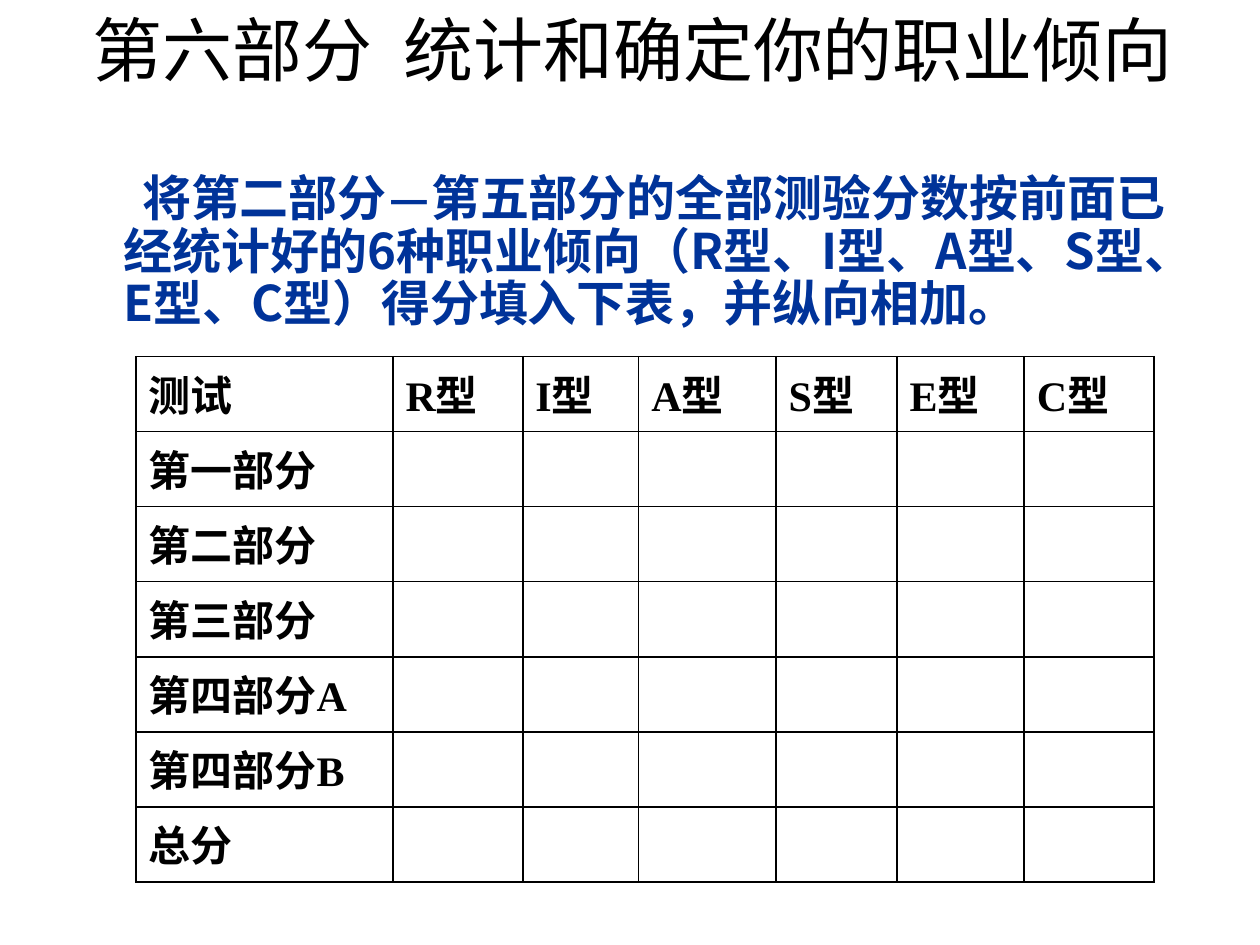
import pptx
import pptx.dml.color
import pptx.enum.text
import pptx.oxml
import pptx.oxml.ns
import pptx.util
from dataclasses import dataclass
from lxml import etree

Inches = pptx.util.Inches
Pt = pptx.util.Pt
qn = pptx.oxml.ns.qn


@dataclass(frozen=True)
class Theme:
    black: str = "000000"
    blue: str = "003399"
    white: str = "FFFFFF"
    chinese: str = "Noto Sans CJK SC"
    dash: str = "Calibri"
    table: str = "Times New Roman"
    title_size: int = 40
    body_size: int = 28
    table_size: int = 24
    border_width: int = 1


THEME = Theme()
TITLE = "第六部分  统计和确定你的职业倾向"
INSTRUCTION = (
    ("将第二部分", THEME.chinese),
    ("—", THEME.dash),
    ("第五部分的全部测验分数按前面已经统计好的6种职业倾向"
     "（R型、I型、A型、S型、E型、C型）得分填入下表，并纵向相加。", THEME.chinese),
)
HEADERS = ["测试"] + [f"{letter}型" for letter in "RIASEC"]
ROW_LABELS = ["第一部分", "第二部分", "第三部分", "第四部分A", "第四部分B", "总分"]
COLUMN_WIDTHS = [2.04, 1.03, 0.92, 1.09, 0.96, 1.01, 1.03]
TABLE_HEIGHT = 4.17


def rgb(color):
    return pptx.dml.color.RGBColor.from_string(color)


def set_typeface(font, latin, east_asian, properties):
    font.name = latin
    etree.SubElement(properties, qn("a:ea"), typeface=east_asian)


def style_paragraph(paragraph, size, color, latin, bold=False):
    font = paragraph.font
    font.size = Pt(size)
    font.bold = bold
    font.color.rgb = rgb(color)
    properties = paragraph._p.pPr.find(qn("a:defRPr"))
    set_typeface(font, latin, THEME.chinese, properties)


def set_indent(paragraph, margin, first_line):
    properties = paragraph._p.get_or_add_pPr()
    properties.set("marL", str(Inches(margin)))
    properties.set("indent", str(Inches(first_line)))


def add_text_box(slide, left, top, width, height):
    shape = slide.shapes.add_textbox(
        Inches(left), Inches(top), Inches(width), Inches(height))
    shape.text_frame.word_wrap = True
    return shape.text_frame.paragraphs[0]


def add_title(slide):
    paragraph = add_text_box(slide, 0.35, 0, 9.34, 1.25)
    paragraph.text = TITLE
    paragraph.alignment = pptx.enum.text.PP_ALIGN.CENTER
    style_paragraph(paragraph, THEME.title_size, THEME.black, THEME.chinese)


def add_instruction(slide):
    paragraph = add_text_box(slide, 0.5, 1.33, 9.08, 1.42)
    set_indent(paragraph, 0.38, 0.15)
    paragraph.line_spacing = 0.9
    style_paragraph(paragraph, THEME.body_size, THEME.blue, THEME.chinese, bold=True)
    for text, typeface in INSTRUCTION:
        run = paragraph.add_run()
        run.text = text
        set_typeface(run.font, typeface, typeface, run._r.get_or_add_rPr())


def style_cell(cell):
    # Borders come before the fill in the cell properties
    properties = cell._tc.get_or_add_tcPr()
    for side in ("lnL", "lnR", "lnT", "lnB"):
        line = etree.SubElement(
            properties, qn(f"a:{side}"), w=str(Pt(THEME.border_width)))
        fill = etree.SubElement(line, qn("a:solidFill"))
        etree.SubElement(fill, qn("a:srgbClr"), val=THEME.black)
    cell.fill.solid()
    cell.fill.fore_color.rgb = rgb(THEME.white)
    cell.vertical_anchor = pptx.enum.text.MSO_ANCHOR.TOP


def add_score_table(slide):
    rows = [HEADERS] + [[label] + [""] * 6 for label in ROW_LABELS]
    table = slide.shapes.add_table(
        len(rows), len(HEADERS), Inches(1.08), Inches(2.83),
        Inches(sum(COLUMN_WIDTHS)), Inches(TABLE_HEIGHT)).table
    table.first_row = False
    table.horz_banding = False
    for column, width in zip(table.columns, COLUMN_WIDTHS):
        column.width = Inches(width)
    for row, texts in zip(table.rows, rows):
        row.height = Inches(TABLE_HEIGHT / len(rows))
        for cell, text in zip(row.cells, texts):
            style_cell(cell)
            paragraph = cell.text_frame.paragraphs[0]
            paragraph.text = text
            set_indent(paragraph, 0.38, -0.38)
            style_paragraph(
                paragraph, THEME.table_size, THEME.black, THEME.table, bold=True)


def main():
    presentation = pptx.Presentation()
    presentation.slide_width = Inches(10)
    presentation.slide_height = Inches(7.5)
    slide = presentation.slides.add_slide(presentation.slide_layouts[6])

    # Heading and instruction
    add_title(slide)
    add_instruction(slide)

    # Score sheet
    add_score_table(slide)
    presentation.save("out.pptx")


if __name__ == "__main__":
    main()
